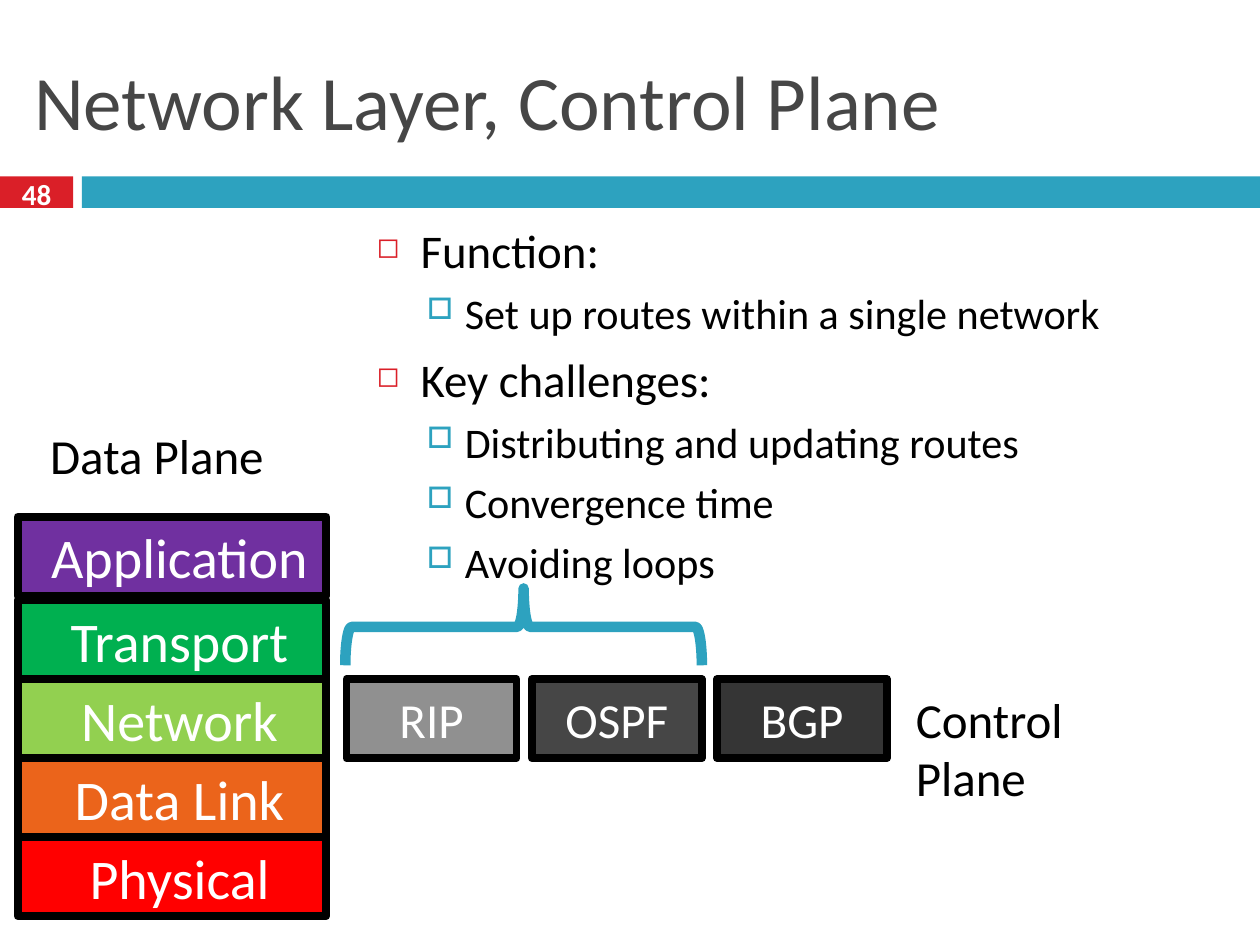
from pptx import Presentation
from pptx.dml.color import RGBColor
from pptx.enum.shapes import MSO_SHAPE
from pptx.enum.text import MSO_ANCHOR, MSO_AUTO_SIZE, PP_ALIGN
from pptx.oxml.ns import qn
from pptx.util import Inches, Pt
from lxml import etree

RECT, BRACE = MSO_SHAPE.RECTANGLE, MSO_SHAPE.LEFT_BRACE
TOP, MID = MSO_ANCHOR.TOP, MSO_ANCHOR.MIDDLE
LEFT, CENTER = PP_ALIGN.LEFT, PP_ALIGN.CENTER
FIXED = MSO_AUTO_SIZE.NONE

BLACK = RGBColor(0, 0, 0)
WHITE = RGBColor(0xFF, 0xFF, 0xFF)
RED = RGBColor(0xDA, 0x1F, 0x28)
TEAL = RGBColor(0x2D, 0xA2, 0xBF)
GRAY = RGBColor(0x46, 0x46, 0x46)
PALE = RGBColor(0x90, 0x90, 0x90)
DARK = RGBColor(0x35, 0x35, 0x35)

LAYERS = [
    ("Application", RGBColor(0x70, 0x30, 0xA0)),
    ("Transport", RGBColor(0x00, 0xB0, 0x50)),
    ("Network", RGBColor(0x92, 0xD0, 0x50)),
    ("Data Link", RGBColor(0xEB, 0x64, 0x1B)),
    ("Physical", RGBColor(0xFF, 0x00, 0x00)),
]
ROUTING = [("RIP", PALE), ("OSPF", GRAY), ("BGP", DARK)]
POINTS = [
    (0, "Function:"),
    (1, "Set up routes within a single network"),
    (0, "Key challenges:"),
    (1, "Distributing and updating routes"),
    (1, "Convergence time"),
    (1, "Avoiding loops"),
]
# level: size, space before, margin, hang, mark, mark colour, mark percent
LEVELS = [
    (26.8, 7, 0.35, 0.35, "◻", RED, 60),
    (24.1, 5.5, 0.7, 0.3, "□", TEAL, 70),
]


class Deck:
    """Draws on one slide, on a grid of 100 columns by 75 rows."""

    font = "Calibri"
    edge = 4.5

    def __init__(self):
        self.prs = Presentation()
        self.prs.slide_width = Inches(10)
        self.prs.slide_height = Inches(7.5)
        self.col = self.prs.slide_width / 100
        self.row = self.prs.slide_height / 75
        self.slide = self.prs.slides.add_slide(self.prs.slide_layouts[5])

    def place(self, col, row, cols, rows):
        return (round(col * self.col), round(row * self.row),
                round(cols * self.col), round(rows * self.row))

    def text(self, para, words, size, color, bold=False, align=LEFT):
        para.alignment = align
        run = para.add_run()
        run.text = words
        run.font.name = self.font
        run.font.size = Pt(size)
        run.font.bold = bold
        run.font.color.rgb = color

    def title(self, spot, words):
        shape = self.slide.shapes.title
        shape.left, shape.top, shape.width, shape.height = self.place(*spot)
        frame = shape.text_frame
        frame.auto_size = FIXED
        frame.vertical_anchor = MID
        self.text(frame.paragraphs[0], words, 44, GRAY)

    def label(self, spot, words, size=28, color=BLACK, bold=False,
              align=LEFT, anchor=TOP):
        frame = self.frame(spot)
        frame.vertical_anchor = anchor
        self.text(frame.paragraphs[0], words, size, color, bold, align)

    def frame(self, spot):
        frame = self.slide.shapes.add_textbox(*self.place(*spot)).text_frame
        frame.word_wrap = True
        return frame

    def shape(self, kind, spot):
        shape = self.slide.shapes.add_shape(kind, *self.place(*spot))
        shape.shadow.inherit = False
        return shape

    def bar(self, spot, fill):
        shape = self.shape(RECT, spot)
        shape.fill.solid()
        shape.fill.fore_color.rgb = fill
        shape.line.fill.background()
        return shape

    def box(self, spot, fill, words, size, anchor=MID, inset=0):
        shape = self.bar(spot, fill)
        shape.line.color.rgb = BLACK
        shape.line.width = Pt(self.edge)
        frame = shape.text_frame
        frame.vertical_anchor = anchor
        para = frame.paragraphs[0]
        self.text(para, words, size, WHITE, align=CENTER)
        if inset:
            para._p.get_or_add_pPr().set("marL", str(Inches(inset)))

    def brace(self, spot):
        shape = self.shape(BRACE, spot)
        shape.rotation = 90
        shape.adjustments[0] = 0.083
        shape.adjustments[1] = 0.5
        shape.fill.background()
        shape.line.color.rgb = TEAL
        shape.line.width = Pt(6)

    def bullets(self, spot, points):
        frame = self.frame(spot)
        for i, (level, words) in enumerate(points):
            para = frame.add_paragraph() if i else frame.paragraphs[0]
            size, gap, margin, hang, mark, color, part = LEVELS[level]
            self.text(para, words, size, BLACK)
            para.level = level
            para.space_before = Pt(gap)
            props = para._p.get_or_add_pPr()
            props.set("marL", str(Inches(margin)))
            props.set("indent", str(-Inches(hang)))
            tint = etree.SubElement(props, qn("a:buClr"))
            etree.SubElement(tint, qn("a:srgbClr"), val=str(color))
            etree.SubElement(props, qn("a:buSzPct"), val=str(part * 1000))
            etree.SubElement(props, qn("a:buChar"), char=mark)


def main():
    deck = Deck()
    deck.bar((0, 14, 5.8, 2.5), RED)
    deck.bar((6.5, 14, 93.5, 2.5), TEAL)
    deck.title((1.7, 2.5, 96.7, 10.8), "Network Layer, Control Plane")
    deck.label((0, 13.7, 5.8, 3.3), "48", 16.6, WHITE, True, CENTER, MID)
    deck.bullets((28.9, 17.1, 69.5, 29.6), POINTS)

    high = 6.27
    base = 53.9
    for i, (name, fill) in enumerate(LAYERS):
        top = base + (i - 2) * high if i else 41
        deck.box((1.4, top, 24.5, high), fill, name, 32, TOP, 0.12)

    deck.brace((38.5, 35.6, 6.1, 28.3))
    for i, (name, fill) in enumerate(ROUTING):
        deck.box((27.5 + i * 14.7, base, 13.5, high), fill, name, 28)

    deck.label((71.7, 54.2, 22.5, 5.7), "Control Plane")
    deck.label((3, 33.3, 21.5, 5.7), "Data Plane")
    deck.prs.save("out.pptx")


if __name__ == "__main__":
    main()
